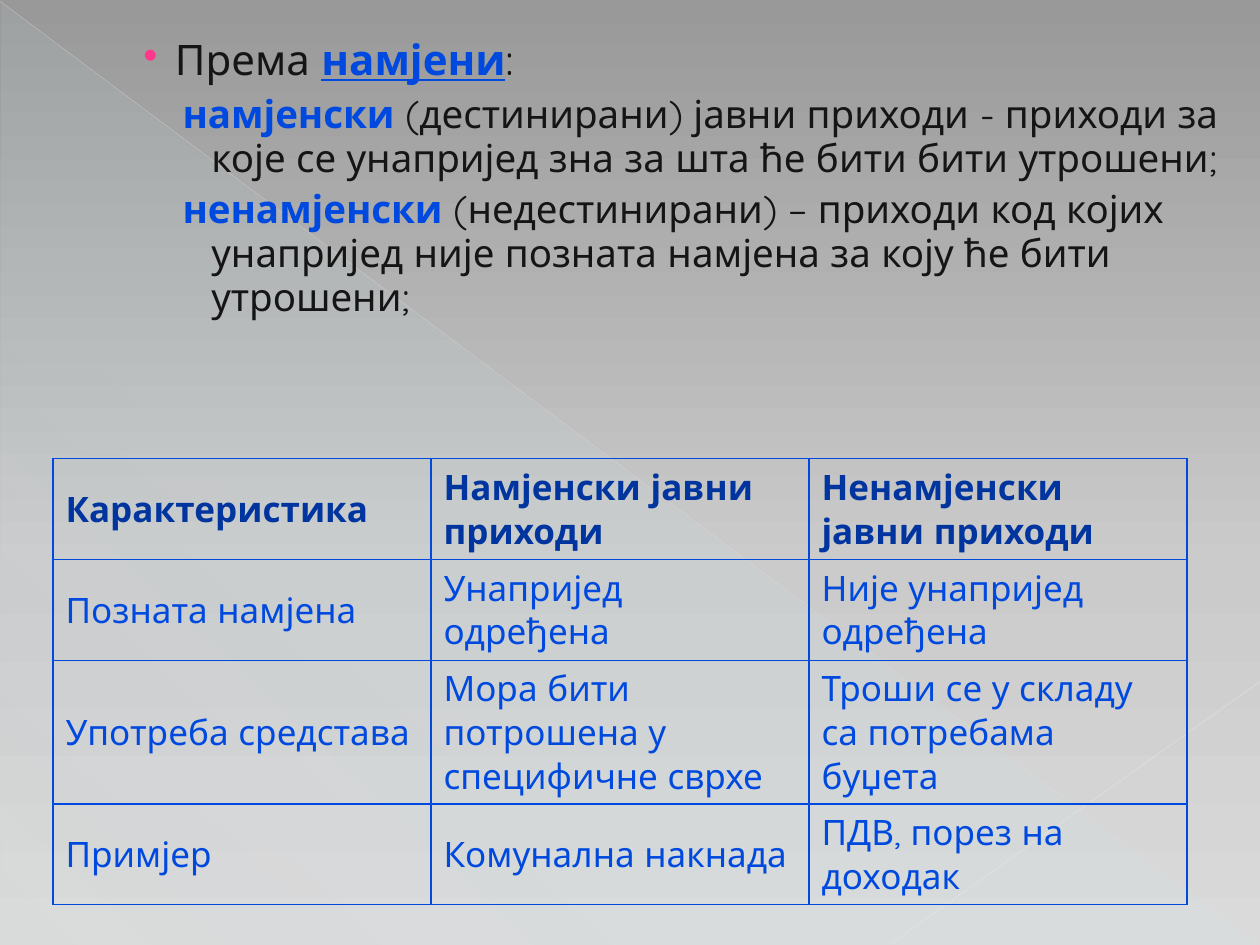
from lxml.etree import SubElement
from pptx import Presentation
from pptx.dml.color import RGBColor
from pptx.enum.shapes import MSO_CONNECTOR, MSO_SHAPE
from pptx.enum.text import MSO_ANCHOR
from pptx.oxml.ns import qn
from pptx.util import Inches, Pt

FONT = "Quicksand"
BLUE = RGBColor(0x00, 0x49, 0xDF)
NAVY = RGBColor(0x00, 0x34, 0x9E)
INK = RGBColor(0x15, 0x15, 0x15)
PINK = RGBColor(0xFF, 0x38, 0x8C)
ICE = RGBColor(0xD0, 0xF1, 0xFE)
DARK = RGBColor(0x99, 0x99, 0x99)
GREY = RGBColor(0xCB, 0xCB, 0xCB)
PALE = RGBColor(0xDA, 0xDA, 0xDA)
MIST = RGBColor(0xE8, 0xE8, 0xE8)
HAZE = RGBColor(0xEA, 0xEA, 0xEA)

ITEMS = [
    ("намјенски", " (дестинирани) јавни приходи - приходи за које се унапријед зна "
     "за шта ће бити бити утрошени;"),
    ("ненамјенски", " (недестинирани) – приходи код којих унапријед није позната "
     "намјена за коју ће бити утрошени;"),
]
ROWS = [
    ("Карактеристика", "Намјенски јавни приходи", "Ненамјенски јавни приходи"),
    ("Позната намјена", "Унапријед одређена", "Није унапријед одређена"),
    ("Употреба средстава", "Мора бити потрошена у специфичне сврхе",
     "Троши се у складу са потребама буџета"),
    ("Примјер", "Комунална накнада", "ПДВ, порез на доходак"),
]
HEIGHTS = (0.8, 0.8, 1.14, 0.8)


def add_tint(node, color, alpha=100):
    """Add a colour with an opacity in percent to an XML node."""
    tint = SubElement(node, qn("a:srgbClr"), val=str(color))
    if alpha < 100:
        SubElement(tint, qn("a:alpha"), val=str(alpha * 1000))


def set_blend(fill, root, stops, angle):
    """Fill with a linear gradient of (percent, colour, opacity) stops."""
    fill.gradient()
    grad = next(root.iter(qn("a:gradFill")))
    for child in list(grad):
        grad.remove(child)
    group = SubElement(grad, qn("a:gsLst"))
    for spot, color, alpha in stops:
        add_tint(SubElement(group, qn("a:gs"), pos=str(spot * 1000)), color, alpha)
    SubElement(grad, qn("a:lin"), ang=str(angle * 60000), scaled="0")


def add_wedge(slide):
    """Add the faint triangle behind the content."""
    wedge = slide.shapes.add_shape(MSO_SHAPE.RIGHT_TRIANGLE, Inches(0.01), Inches(0.02),
                                   Inches(9.98), Inches(7.48))
    wedge.shadow.inherit = False
    wedge.line.fill.background()
    set_blend(wedge.fill, wedge.element, [(0, ICE, 10), (70, ICE, 8), (100, ICE, 1)], 133)


def add_ray(slide, start, end, color, width, alpha):
    """Add a thin translucent line."""
    ray = slide.shapes.add_connector(MSO_CONNECTOR.STRAIGHT,
                                     *(Inches(value) for value in start + end))
    ray.line.width = Pt(width)
    ray.line.color.rgb = color
    tint = next(ray.element.iter(qn("a:srgbClr")))
    SubElement(tint, qn("a:alpha"), val=str(alpha * 1000))
    SubElement(ray.element.spPr, qn("a:effectLst"))


def set_font(font, size, color, bold=False):
    """Set the typeface, size, colour and weight of a font."""
    font.name = FONT
    font.size = Pt(size)
    font.color.rgb = color
    font.bold = bold


def add_run(para, text, strong=False, under=False):
    """Add a run, blue and bold where it is a key term."""
    run = para.add_run()
    run.text = text
    if strong:
        run.font.bold = True
        run.font.color.rgb = BLUE
    if under:
        run.font.underline = True


def set_para(para, size, left, hang, bullet=False):
    """Set the indent, bullet, spacing and font of a paragraph."""
    props = para._p.get_or_add_pPr()
    props.set("marL", str(Inches(left)))
    props.set("indent", str(-Inches(hang)))
    if bullet:
        add_tint(SubElement(props, qn("a:buClr")), PINK)
        SubElement(props, qn("a:buChar"), char="•")
    else:
        SubElement(props, qn("a:buNone"))
    para.space_before = Pt(size * 0.2)
    para.line_spacing = 0.95
    set_font(para.font, size, INK)


def add_body(slide):
    """Add the heading bullet and its two definitions."""
    box = slide.shapes.add_textbox(Inches(0.08), Inches(0.25), Inches(9.75), Inches(6.81))
    frame = box.text_frame
    frame.word_wrap = True
    head = frame.paragraphs[0]
    set_para(head, 24, 1.21, 0.25, bullet=True)
    add_run(head, "Према ")
    add_run(head, "намјени", strong=True, under=True)
    add_run(head, ":")
    for term, text in ITEMS:
        para = frame.add_paragraph()
        set_para(para, 22, 1.5, 0.23)
        add_run(para, term, strong=True)
        add_run(para, text)


def set_cell(cell, text, head):
    """Fill one table cell and draw its borders."""
    props = cell._tc.get_or_add_tcPr()
    for side in ("lnL", "lnR", "lnT", "lnB"):
        edge = SubElement(props, qn(f"a:{side}"), w=str(Pt(1)))
        add_tint(SubElement(edge, qn("a:solidFill")), BLUE)
    cell.fill.background()
    cell.vertical_anchor = MSO_ANCHOR.MIDDLE
    cell.text = text
    set_font(cell.text_frame.paragraphs[0].font, 20, NAVY if head else BLUE, head)


def add_grid(slide):
    """Add the comparison table."""
    frame = slide.shapes.add_table(len(ROWS), len(ROWS[0]), Inches(0.42), Inches(3.64),
                                   Inches(9), Inches(sum(HEIGHTS)))
    table = frame.table
    table.horz_banding = False
    for row, (texts, height) in enumerate(zip(ROWS, HEIGHTS)):
        table.rows[row].height = Inches(height)
        for col, text in enumerate(texts):
            set_cell(table.cell(row, col), text, row == 0)


def main():
    """Build and save the slide."""
    deck = Presentation()
    deck.slide_width, deck.slide_height = Inches(10), Inches(7.5)
    slide = deck.slides.add_slide(deck.slide_layouts[6])
    set_blend(slide.background.fill, slide.element,
              [(0, DARK, 100), (60, GREY, 100), (100, PALE, 100)], 90)
    add_wedge(slide)
    add_ray(slide, (0, 0.01), (9.99, 7.49), MIST, 0.39, 35)
    add_ray(slide, (10, 5.41), (7.07, 7.49), HAZE, 0.47, 45)
    add_body(slide)
    add_grid(slide)
    deck.save("out.pptx")


if __name__ == "__main__":
    main()
